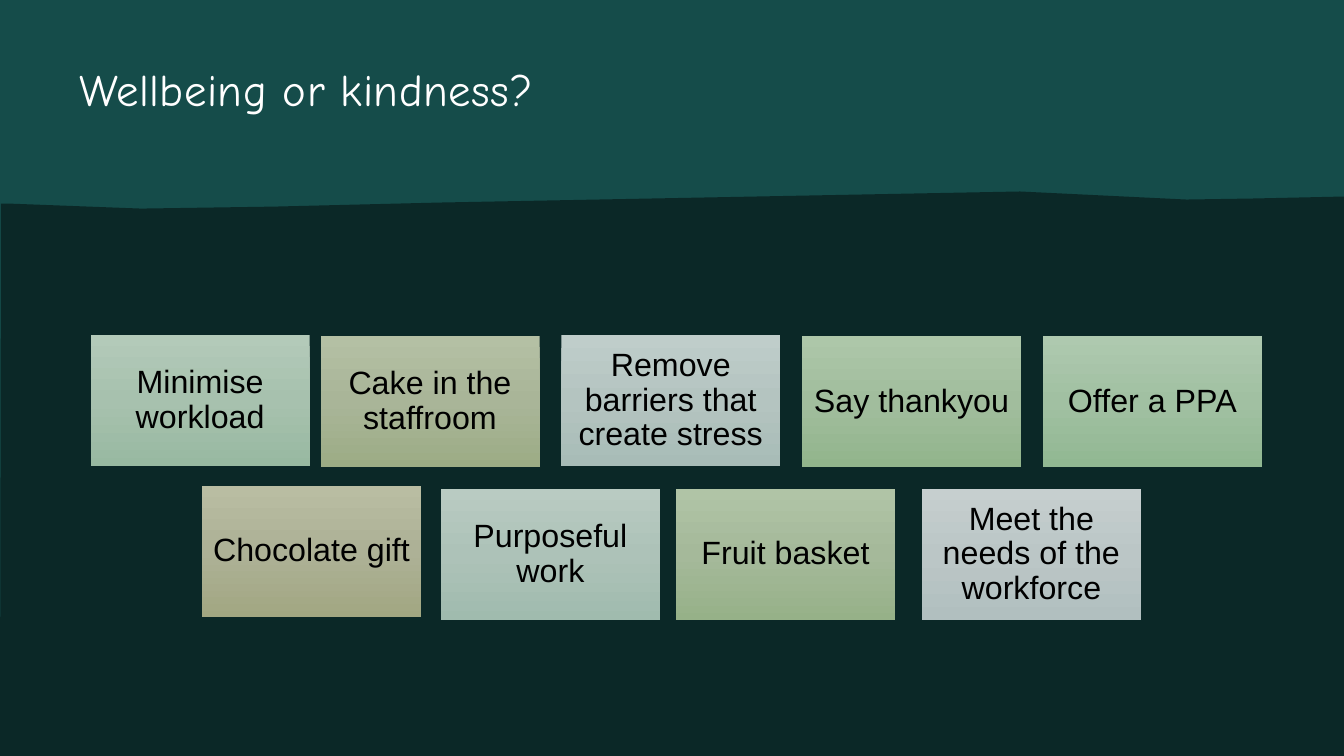
from copy import deepcopy

from pptx import Presentation
from pptx.dml.color import RGBColor
from pptx.enum.shapes import MSO_SHAPE
from pptx.enum.text import MSO_ANCHOR, MSO_AUTO_SIZE, PP_ALIGN
from pptx.util import Pt

SLIDE_WIDTH, SLIDE_HEIGHT = 960, 540
TILE_WIDTH, TILE_HEIGHT = 156.4, 93.8
TILE_INSET = 6.9
TEAL, DARK_TEAL = "154C4A", "0B2827"

PANEL_OUTLINE = [
    (728.64, 136.8), (847.44, 142.56), (894.96, 141.84), (SLIDE_WIDTH, 140.4),
    (SLIDE_WIDTH, SLIDE_HEIGHT), (0, SLIDE_HEIGHT), (0.72, 145.44),
    (5.76, 145.44), (100.8, 149.04), (195.84, 147.6), (313.92, 144.72),
]

TILES = [
    ("Minimise workload", 64.8, 239.3, ("B3CAB9", "A7C1AE", "98B9A1")),
    ("Cake in the staffroom", 229, 240, ("B4C0A4", "A9B598", "9CAC85")),
    ("Remove barriers that create stress", 401, 239.3, ("BFCDCA", "B4C4C0", "A8BCB7")),
    ("Say thankyou", 573, 240, ("ADC7A9", "A1BD9D", "92B58C")),
    ("Offer a PPA", 745, 240, ("AEC9AF", "A1C0A2", "91B892")),
    ("Chocolate gift", 144.4, 347, ("B9BDA2", "ADB196", "A2A782")),
    ("Purposeful work", 315, 349.2, ("B9CBC2", "ADC2B8", "A0BBAE")),
    ("Fruit basket", 483, 349.2, ("B0C4A6", "A5B99A", "96B188")),
    ("Meet the needs of the workforce", 658.6, 349.2, ("C6CFCF", "BBC6C6", "B1BFBF")),
]


def color(hex_string):
    """Return the colour for a hex string."""
    return RGBColor.from_string(hex_string)


def fill_plain(shape, hex_string):
    """Give a shape a solid fill with no line or shadow."""
    shape.shadow.inherit = False
    shape.line.fill.background()
    shape.fill.solid()
    shape.fill.fore_color.rgb = color(hex_string)


def fill_gradient(shape, hex_strings):
    """Give a shape a three-stop gradient running from top to bottom."""
    shape.shadow.inherit = False
    shape.line.fill.background()
    shape.fill.gradient()
    shape.fill.gradient_angle = 270
    stop_list = shape.fill._fill._gradFill.gsLst
    stop_list.insert(1, deepcopy(stop_list[0]))
    for index, stop in enumerate(shape.fill.gradient_stops):
        stop.position = index / 2
        stop.color.rgb = color(hex_strings[index])


def set_insets(text_frame, inset):
    """Set all four margins of a text frame."""
    text_frame.margin_left = text_frame.margin_right = Pt(inset)
    text_frame.margin_top = text_frame.margin_bottom = Pt(inset)


def format_text(paragraph, font_name, size, hex_string, alignment, line_spacing):
    """Format a paragraph and its run."""
    paragraph.alignment = alignment
    paragraph.line_spacing = line_spacing
    font = paragraph.runs[0].font
    font.name = font_name
    font.size = Pt(size)
    font.color.rgb = color(hex_string)


def add_background(slide):
    """Draw the teal backdrop and the dark panel with its uneven upper edge."""
    background = slide.background.fill
    background.solid()
    background.fore_color.rgb = color(DARK_TEAL)
    backdrop = slide.shapes.add_shape(
        MSO_SHAPE.RECTANGLE, 0, 0, Pt(SLIDE_WIDTH), Pt(SLIDE_HEIGHT))
    fill_plain(backdrop, TEAL)
    points = [(Pt(x), Pt(y)) for x, y in PANEL_OUTLINE]
    builder = slide.shapes.build_freeform(*points[0])
    builder.add_line_segments(points[1:], close=True)
    fill_plain(builder.convert_to_shape(), DARK_TEAL)


def place_title(slide, text):
    """Fill the title placeholder and bring it in front of the background."""
    title = slide.shapes.title
    title.left, title.top = Pt(56.9), Pt(49)
    title.width, title.height = Pt(844.6), Pt(54)
    text_frame = title.text_frame
    text_frame.text = text
    text_frame.auto_size = MSO_AUTO_SIZE.NONE
    text_frame.vertical_anchor = MSO_ANCHOR.TOP
    set_insets(text_frame, 0)
    paragraph = text_frame.paragraphs[0]
    format_text(paragraph, "Comic Neue", 32, "FFFFFF", PP_ALIGN.LEFT, 0.88)
    paragraph.runs[0].font._element.set("spc", "40")
    slide.shapes._spTree.append(title._element)


def add_tile(slide, text, left, top, hex_strings):
    """Add one gradient tile with centred text."""
    tile = slide.shapes.add_shape(
        MSO_SHAPE.RECTANGLE, Pt(left), Pt(top), Pt(TILE_WIDTH), Pt(TILE_HEIGHT))
    fill_gradient(tile, hex_strings)
    text_frame = tile.text_frame
    text_frame.text = text
    text_frame.word_wrap = True
    text_frame.vertical_anchor = MSO_ANCHOR.MIDDLE
    set_insets(text_frame, TILE_INSET)
    format_text(text_frame.paragraphs[0], "Arial", 23, "000000", PP_ALIGN.CENTER, 0.9)


def main():
    """Build the slide and save it."""
    presentation = Presentation()
    presentation.slide_width = Pt(SLIDE_WIDTH)
    presentation.slide_height = Pt(SLIDE_HEIGHT)
    slide = presentation.slides.add_slide(presentation.slide_layouts[5])
    add_background(slide)
    place_title(slide, "Wellbeing or kindness?")
    for tile in TILES:
        add_tile(slide, *tile)
    presentation.save("out.pptx")


if __name__ == "__main__":
    main()
